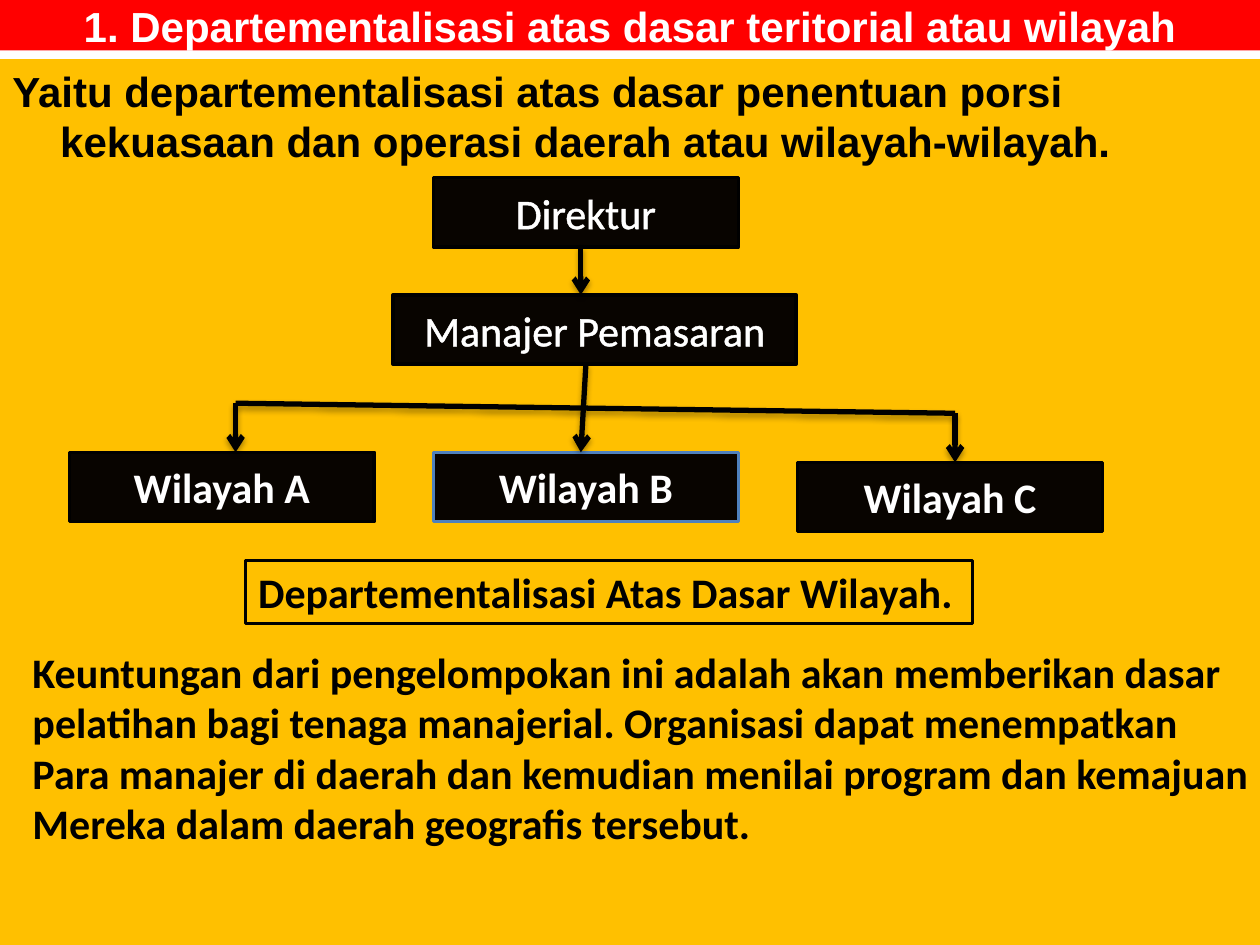
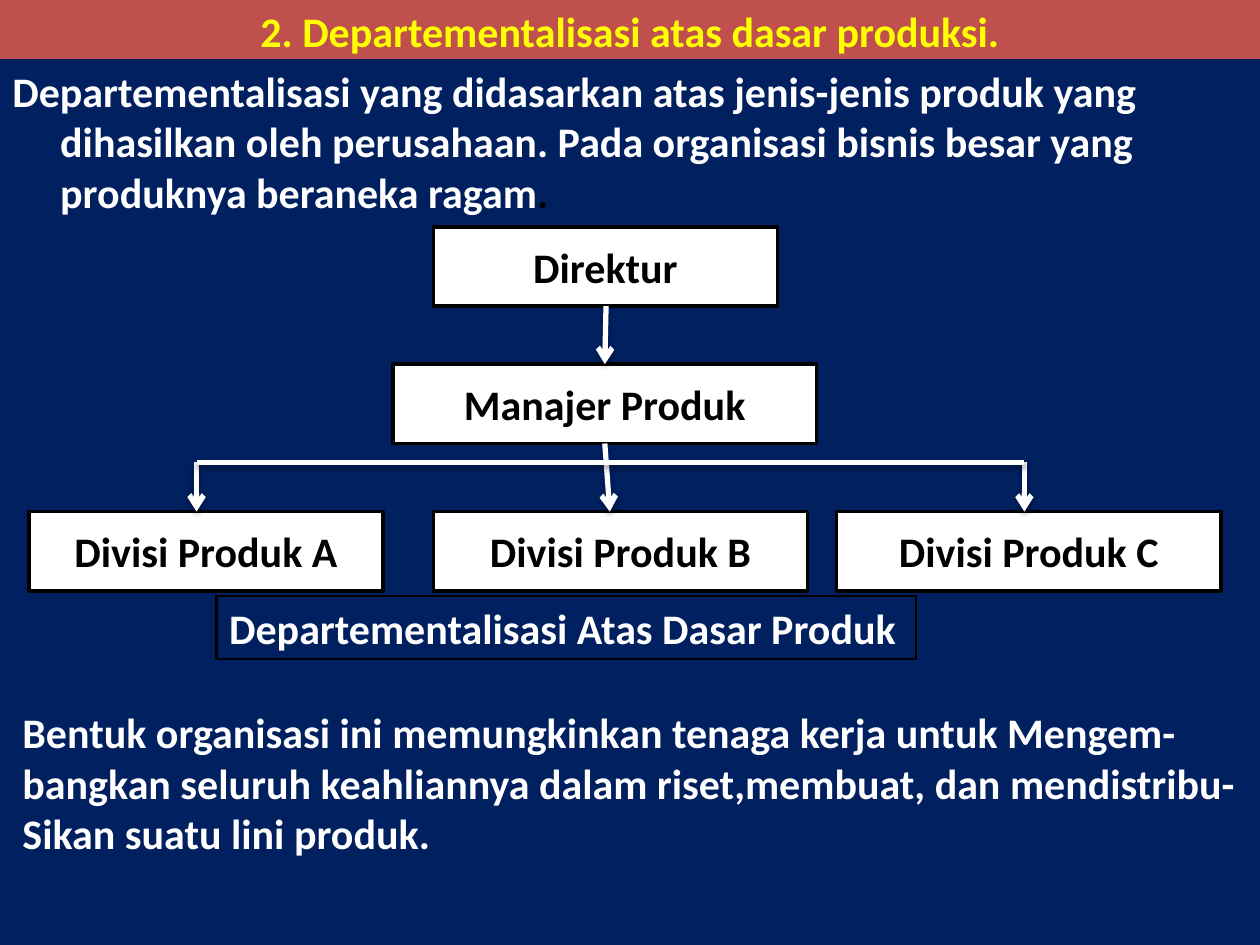
import dataclasses

import lxml.etree
import pptx
import pptx.dml.color
import pptx.enum.shapes
import pptx.enum.text
import pptx.oxml
import pptx.oxml.ns
import pptx.util

COLORS = {
    "red": "FF0000", "brick": "C0504D", "amber": "FFC000", "navy": "002060",
    "yellow": "FFFF00", "white": "FFFFFF", "black": "000000", "ink": "080400",
    "blue": "4F81BD",
}
SLIDE_WIDTH = pptx.util.Inches(10)
SLIDE_HEIGHT = pptx.util.Inches(7.5)
COLUMN = SLIDE_WIDTH / 100
ROW = SLIDE_HEIGHT / 75
BRANCH_RISE = 3.9
HANGING_INDENT = pptx.util.Inches(0.38)
ALIGN = pptx.enum.text.PP_ALIGN
ANCHOR = pptx.enum.text.MSO_ANCHOR
AUTO_SIZE = pptx.enum.text.MSO_AUTO_SIZE


@dataclasses.dataclass
class Box:
    left: float
    top: float
    width: float
    height: float

    @property
    def bottom(self):
        return self.top + self.height

    def inner(self, left, top, width, height):
        return Box(self.left + left, self.top + top, width, height)

    def emu(self):
        return (round(self.left * COLUMN), round(self.top * ROW),
                round(self.width * COLUMN), round(self.height * ROW))


def rgb(name):
    return pptx.dml.color.RGBColor.from_string(COLORS[name])


def add_xml(parent, tag, position=None, **attributes):
    element = lxml.etree.Element(pptx.oxml.ns.qn(tag), **attributes)
    parent.insert(len(parent) if position is None else position, element)
    return element


def write_text(shape, paragraphs, color="black", font="Calibri", bold=True,
               align=ALIGN.LEFT, anchor=ANCHOR.TOP, wrap=True, hanging=False,
               outline=None, ending=None):
    frame = shape.text_frame
    frame.word_wrap = wrap
    frame.auto_size = AUTO_SIZE.NONE if wrap else AUTO_SIZE.SHAPE_TO_FIT_TEXT
    frame.vertical_anchor = anchor
    for index, words in enumerate(paragraphs):
        paragraph = frame.add_paragraph() if index else frame.paragraphs[0]
        paragraph.alignment = align
        if hanging:
            paragraph.space_before = pptx.util.Pt(4.8)
            properties = paragraph._p.get_or_add_pPr()
            properties.set("marL", str(HANGING_INDENT))
            properties.set("indent", str(-HANGING_INDENT))
        for part, part_color in [(words, color)] + ([ending] if ending else []):
            run = paragraph.add_run()
            run.text = part
            run.font.name = font
            run.font.size = pptx.util.Pt(24)
            run.font.bold = bold
            run.font.color.rgb = rgb(part_color)
            if outline:
                edge = add_xml(run._r.get_or_add_rPr(), "a:ln", 0, w="18415")
                add_xml(add_xml(edge, "a:solidFill"), "a:srgbClr", val=COLORS[outline])


def add_panel(slide, box, fill=None, line=None, line_width=2):
    panel = slide.shapes.add_shape(
        pptx.enum.shapes.MSO_SHAPE.RECTANGLE, *box.emu())
    panel.shadow.inherit = False
    if fill:
        panel.fill.solid()
        panel.fill.fore_color.rgb = rgb(fill)
    else:
        panel.fill.background()
    if line:
        panel.line.color.rgb = rgb(line)
        panel.line.width = pptx.util.Pt(line_width)
    else:
        panel.line.fill.background()
    return panel


def add_link(slide, start, end, color, arrow=True):
    link = slide.shapes.add_connector(
        pptx.enum.shapes.MSO_CONNECTOR.STRAIGHT,
        *(round(value * unit) for value, unit in zip(start + end, (COLUMN, ROW) * 2)))
    link.line.color.rgb = rgb(color)
    link.line.width = pptx.util.Pt(3)
    if arrow:
        add_xml(link.line._get_or_add_ln(), "a:tailEnd", type="arrow")
    effects = add_xml(link._element.spPr, "a:effectLst")
    shadow = add_xml(effects, "a:outerShdw", blurRad="40000", dist="23000",
                     dir="5400000", rotWithShape="0")
    shade = add_xml(shadow, "a:srgbClr", val=COLORS["black"])
    add_xml(shade, "a:alpha", val="35000")


def place_title(slide, box, words, fill, **text_format):
    title = slide.shapes.title
    title.left, title.top, title.width, title.height = box.emu()
    title.fill.solid()
    title.fill.fore_color.rgb = rgb(fill)
    write_text(title, [words], align=ALIGN.CENTER, anchor=ANCHOR.MIDDLE, **text_format)


def place_definition(slide, box, words, fill, **text_format):
    panel = add_panel(slide, box, fill)
    write_text(panel, [words], hanging=True, **text_format)


def place_chart(slide, box, units, height, fill, color, link_color,
                director_drop, manager_drop, branch_ends):
    placed = []
    for words, left, top, width, edge, text_format in units:
        unit = box.inner(left, top, width, height)
        placed.append(unit)
        panel = add_panel(slide, unit, fill, edge)
        write_text(panel, [words], color=color, align=ALIGN.CENTER,
                   anchor=ANCHOR.MIDDLE, **text_format)
    director, manager, first, middle, last = placed
    for upper, lower, (start, end) in ((director, manager, director_drop),
                                       (manager, middle, manager_drop)):
        add_link(slide, (box.left + start, upper.bottom),
                 (box.left + end, lower.top), link_color)
    corners = []
    for branch, end in zip((first, last), branch_ends):
        corner = (box.left + end, branch.top - BRANCH_RISE)
        corners.append(corner)
        add_link(slide, corner, (box.left + end, branch.top), link_color)
    add_link(slide, *corners, link_color, arrow=False)


def place_caption(slide, box, words, color):
    caption = add_panel(slide, box, line="black", line_width=1.5)
    write_text(caption, [words], color=color, wrap=False)


def place_benefit(slide, box, lines, color):
    benefit = slide.shapes.add_textbox(*box.emu())
    write_text(benefit, lines, color=color, wrap=False)


OUTLINED = {"bold": False, "outline": "white"}
BODY_BOX = Box(0, 4.7, 100, 70.3)
DEPARTMENTS = [
    {
        "title": (Box(0, 0, 100, 4), "1. Departementalisasi atas dasar teritorial atau wilayah",
                  "red", {"color": "white", "font": "Arial"}),
        "definition": ("Yaitu departementalisasi atas dasar penentuan porsi kekuasaan "
                       "dan operasi daerah atau wilayah-wilayah.",
                       "amber", {"font": "Arial"}),
        "chart_box": Box(0, 14.1, 100, 28.1),
        "chart": {
            "units": [
                ("Direktur", 34.4, 0, 24.2, "black", OUTLINED),
                ("Manajer Pemasaran", 31.2, 9.3, 32, "black", OUTLINED),
                ("Wilayah A", 5.5, 21.8, 24.2, "black", {}),
                ("Wilayah B", 34.4, 21.8, 24.2, "blue", {}),
                ("Wilayah C", 63.3, 22.6, 24.2, "black", {}),
            ],
            "height": 5.5, "fill": "ink", "color": "white", "link_color": "black",
            "director_drop": (46.1, 46.1), "manager_drop": (46.5, 46.1),
            "branch_ends": (18.7, 75.8),
        },
        "caption": (Box(19.5, 44.5, 57.7, 5), "Departementalisasi Atas Dasar Wilayah."),
        "benefit": (Box(1.6, 50.8, 99.4, 17.2), [
            "Keuntungan dari pengelompokan ini adalah akan memberikan dasar",
            "pelatihan bagi tenaga manajerial. Organisasi dapat menempatkan",
            "Para manajer di daerah dan kemudian menilai program dan kemajuan",
            "Mereka dalam daerah geografis tersebut.",
        ]),
        "color": "black",
    },
    {
        "title": (Box(0, 0, 100, 4.8), "2. Departementalisasi atas dasar produksi.",
                  "brick", {"color": "yellow"}),
        "definition": ("Departementalisasi yang didasarkan atas jenis-jenis produk yang "
                       "dihasilkan oleh perusahaan. Pada organisasi bisnis besar yang "
                       "produknya beraneka ragam",
                       "navy", {"color": "white", "ending": (".", "black")}),
        "chart_box": Box(0, 18, 100, 28.9),
        "chart": {
            "units": [
                ("Direktur", 34.4, 0, 27.3, "black", {}),
                ("Manajer Produk", 31.2, 10.9, 33.6, "black", {}),
                ("Divisi Produk A", 2.3, 22.6, 28.1, "black", {}),
                ("Divisi Produk B", 34.4, 22.6, 29.7, "black", {}),
                ("Divisi Produk C", 66.4, 22.6, 30.5, "black", {}),
            ],
            "height": 6.3, "fill": "white", "color": "black", "link_color": "white",
            "director_drop": (48.1, 48), "manager_drop": (48, 48.4),
            "branch_ends": (15.6, 81.3),
        },
        "caption": (Box(17.2, 47.3, 55.5, 5), "Departementalisasi Atas Dasar Produk"),
        "benefit": (Box(0.8, 55.6, 99.3, 13.1), [
            "Bentuk organisasi ini memungkinkan tenaga kerja untuk Mengem-",
            "bangkan seluruh keahliannya dalam riset,membuat, dan mendistribu-",
            "Sikan suatu lini produk.",
        ]),
        "color": "white",
    },
]


def build_department_slide(deck, department):
    slide = deck.slides.add_slide(deck.slide_layouts.get_by_name("Title Only"))
    title_box, title_words, title_fill, title_format = department["title"]
    place_title(slide, title_box, title_words, title_fill, **title_format)
    definition, body_fill, body_format = department["definition"]
    place_definition(slide, BODY_BOX, definition, body_fill, **body_format)
    place_chart(slide, department["chart_box"], **department["chart"])
    place_caption(slide, *department["caption"], department["color"])
    place_benefit(slide, *department["benefit"], department["color"])


def main():
    deck = pptx.Presentation()
    deck.slide_width = SLIDE_WIDTH
    deck.slide_height = SLIDE_HEIGHT
    for department in DEPARTMENTS:
        build_department_slide(deck, department)
    deck.save("out.pptx")


if __name__ == "__main__":
    main()
